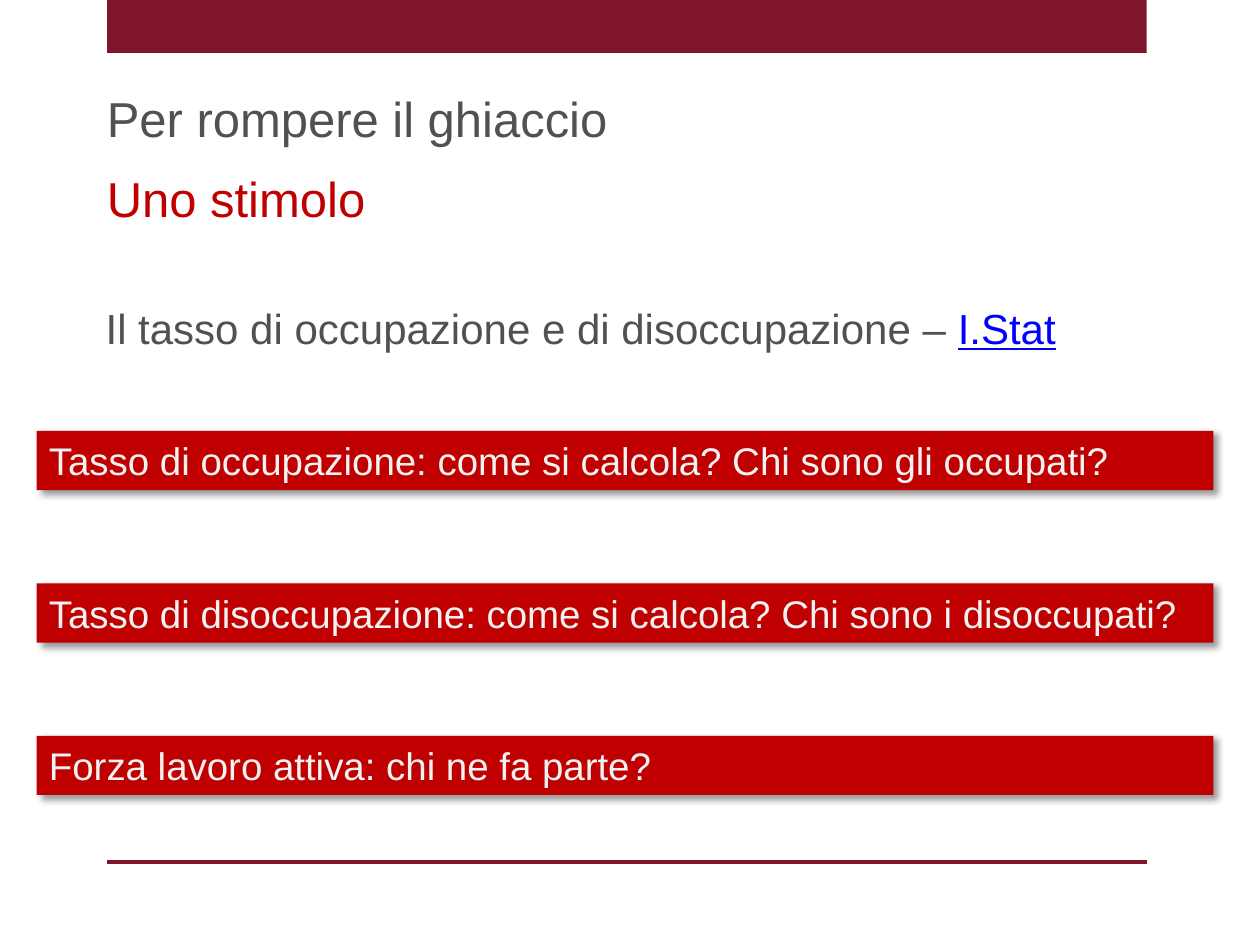
from dataclasses import dataclass

from lxml import etree
from pptx import Presentation
from pptx.dml.color import RGBColor
from pptx.enum.shapes import MSO_CONNECTOR as CONN, MSO_SHAPE as SHAPE
from pptx.enum.text import MSO_ANCHOR as ANCHOR, MSO_AUTO_SIZE as AUTO, PP_ALIGN as ALIGN
from pptx.oxml import parse_xml
from pptx.oxml.ns import nsdecls, qn
from pptx.util import Inches, Pt


@dataclass(frozen=True)
class Theme:
    font: str = "Arial"
    frame: RGBColor = RGBColor(0x7F, 0x14, 0x2A)
    accent: RGBColor = RGBColor(0xC0, 0x00, 0x00)
    text: RGBColor = RGBColor(0x50, 0x51, 0x50)
    link: RGBColor = RGBColor(0x00, 0x00, 0xFF)
    light: RGBColor = RGBColor(0xF2, 0xF2, 0xF2)
    title: int = 28
    body: int = 24
    question: int = 22


THEME = Theme()
SHADOW = (
    f'<a:effectLst {nsdecls("a")}>'
    f'<a:outerShdw blurRad="{Pt(4)}" dist="{Pt(3)}" dir="{45 * 60000}" algn="tl" rotWithShape="0">'
    '<a:srgbClr val="000000"><a:alpha val="40000"/></a:srgbClr>'
    '</a:outerShdw></a:effectLst>'
)


def add_run(p, text, size, color, underline=None):
    r = p.add_run()
    r.text = text
    r.font.name = THEME.font
    r.font.size = Pt(size)
    r.font.color.rgb = color
    r.font.underline = underline


def setup_text(sp):
    tf = sp.text_frame
    tf.word_wrap = True
    tf.auto_size = AUTO.SHAPE_TO_FIT_TEXT
    tf.vertical_anchor = ANCHOR.TOP
    p = tf.paragraphs[0]
    p.alignment = ALIGN.LEFT
    return p


def add_rect(slide, box, color):
    sp = slide.shapes.add_shape(SHAPE.RECTANGLE, *map(Inches, box))
    sp.shadow.inherit = False
    sp.fill.solid()
    sp.fill.fore_color.rgb = color
    sp.line.fill.background()
    return sp


def add_frame(slide, left, top, width, height):
    add_rect(slide, (left, top, width, 0.42), THEME.frame)
    bottom = top + height
    line = slide.shapes.add_connector(
        CONN.STRAIGHT, Inches(left), Inches(bottom), Inches(left + width), Inches(bottom))
    line.line.color.rgb = THEME.frame
    line.line.width = Pt(2)
    etree.SubElement(line._element.spPr, qn("a:effectLst"))


def add_text(slide, box, size, *parts):
    p = setup_text(slide.shapes.add_textbox(*map(Inches, box)))
    for part in parts:
        add_run(p, part[0], size, *part[1:])


def add_questions(slide, left, top, width, height, questions, pitch):
    for i, question in enumerate(questions):
        bar = add_rect(slide, (left, top + i * pitch, width, height), THEME.accent)
        bar.shadow.inherit = True
        bar._element.spPr.append(parse_xml(SHADOW))
        add_run(setup_text(bar), question, THEME.question, THEME.light)


def main():
    prs = Presentation()
    prs.slide_width, prs.slide_height = Inches(10), Inches(7.5)
    slide = prs.slides.add_slide(prs.slide_layouts[6])
    add_frame(slide, 0.85, 0, 8.25, 6.84)
    add_text(slide, (0.74, 2.35, 8.13, 0.5), THEME.body,
             ("Il tasso di occupazione e di disoccupazione – ", THEME.text),
             ("I.Stat", THEME.link, True))
    add_questions(slide, 0.29, 3.42, 9.34, 0.47, [
        "Tasso di occupazione: come si calcola? Chi sono gli occupati?",
        "Tasso di disoccupazione: come si calcola? Chi sono i disoccupati?",
        "Forza lavoro attiva: chi ne fa parte?",
    ], pitch=1.21)
    add_text(slide, (0.75, 0.65, 8.24, 0.57), THEME.title, ("Per rompere il ghiaccio", THEME.text))
    add_text(slide, (0.75, 1.29, 9.17, 0.57), THEME.title, ("Uno stimolo", THEME.accent))
    prs.save("out.pptx")


if __name__ == "__main__":
    main()
